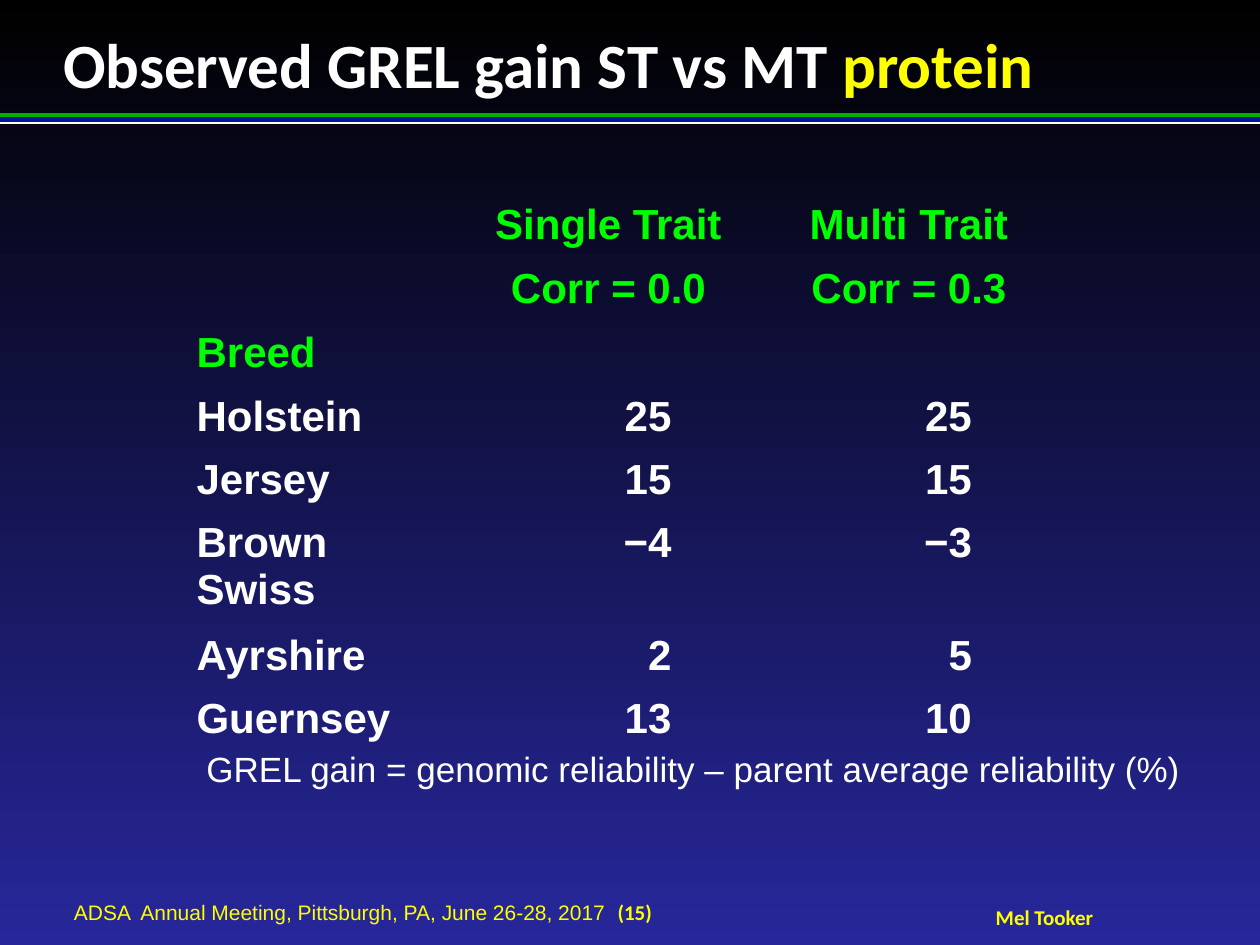
from lxml import etree
from pptx import Presentation
from pptx.dml.color import RGBColor
from pptx.enum.shapes import MSO_SHAPE
from pptx.enum.text import MSO_ANCHOR, MSO_AUTO_SIZE, PP_ALIGN
from pptx.oxml.ns import qn
from pptx.util import Pt

LEFT, CENTER = PP_ALIGN.LEFT, PP_ALIGN.CENTER
TOP, MIDDLE = MSO_ANCHOR.TOP, MSO_ANCHOR.MIDDLE
FIT_SHAPE = MSO_AUTO_SIZE.SHAPE_TO_FIT_TEXT
RECTANGLE = MSO_SHAPE.RECTANGLE
PX = 914400 // 126
WHITE, YELLOW, GREEN = "FFFFFF", "FFFF00", "00FF00"
NO_GRID_STYLE = "{2D5ABB26-0587-4C30-8999-92F81FD0307C}"


def color(hex_string):
    return RGBColor.from_string(hex_string)


def add_run(paragraph, text, size, font_name, font_color, bold=False):
    run = paragraph.add_run()
    run.text = text
    run.font.size = Pt(size)
    run.font.name = font_name
    run.font.bold = bold
    run.font.color.rgb = color(font_color)


presentation = Presentation()
presentation.slide_width = 1260 * PX
presentation.slide_height = 945 * PX
slide = presentation.slides.add_slide(presentation.slide_layouts[5])

background = slide.background.fill
background.gradient()
background.gradient_angle = 270
for stop, stop_color, position in zip(background.gradient_stops, ("000000", "27279B"), (0, 1)):
    stop.color.rgb = color(stop_color)
    stop.position = position

for top, height, stripe_color in ((113, 4, "01AF00"), (121, 3, WHITE), (117, 5, "001799")):
    stripe = slide.shapes.add_shape(RECTANGLE, 0, top * PX, 1260 * PX, height * PX)
    stripe.shadow.inherit = False
    stripe.fill.solid()
    stripe.fill.fore_color.rgb = color(stripe_color)
    stripe.line.fill.background()

title = slide.shapes.title
title.left, title.top, title.width, title.height = 63 * PX, 25 * PX, 1134 * PX, 77 * PX
title_frame = title.text_frame
title_frame.margin_left = title_frame.margin_right = 0
title_frame.margin_top = title_frame.margin_bottom = 0
title_frame.vertical_anchor = TOP
title_frame.word_wrap = True
title_frame.auto_size = FIT_SHAPE
paragraph = title_frame.paragraphs[0]
paragraph.alignment = LEFT
add_run(paragraph, "Observed GREL gain ST vs MT ", 36, "Calibri", WHITE, True)
add_run(paragraph, "protein", 36, "Calibri", YELLOW, True)

rows = [
    ("", "Single Trait", "Multi Trait"),
    ("", "\tCorr = 0.0", "\tCorr = 0.3"),
    ("Breed", "", ""),
    ("Holstein", "\t25", "\t25"),
    ("Jersey", "\t15", "\t15"),
    ("Brown Swiss", "\t−4", "\t−3"),
    ("Ayrshire", "\t2", "\t5"),
    ("Guernsey", "\t13", "\t10"),
]
header_rows = 3
row_heights = [64, 64, 64, 59, 59, 106, 59, 59]
table = slide.shapes.add_table(
    len(rows), 3, 184 * PX, 195 * PX, 884 * PX, sum(row_heights) * PX
).table
table.first_row = False
table.horz_banding = False
table._tbl.tblPr.find(qn("a:tableStyleId")).text = NO_GRID_STYLE
for column, width in zip(table.columns, (283, 283, 318)):
    column.width = width * PX

for row_index, row in enumerate(rows):
    table.rows[row_index].height = row_heights[row_index] * PX
    for column_index, text in enumerate(row):
        cell = table.cell(row_index, column_index)
        cell.fill.background()
        if not text:
            continue
        paragraph = cell.text_frame.paragraphs[0]
        paragraph.alignment = CENTER if column_index else LEFT
        if text.startswith("\t"):
            tab_list = etree.SubElement(paragraph._p.get_or_add_pPr(), qn("a:tabLst"))
            etree.SubElement(tab_list, qn("a:tab"), pos="914400", algn="dec")
        add_run(paragraph, text, 24, "Arial", GREEN if row_index < header_rows else WHITE, True)

text_boxes = [
    (194, 741, 1007, 55, LEFT, False, None, TOP,
     [("GREL gain = genomic reliability – parent average reliability (%)", 20, "Arial", WHITE)]),
    (74, 900, 857, 25, LEFT, True, 0, MIDDLE,
     [("ADSA  Annual Meeting, Pittsburgh, PA, June 26-28, 2017  ", 12, "Arial", YELLOW),
      ("(15)", 12, "Calibri", YELLOW, True)]),
    (989, 905, 111, 25, CENTER, False, 0, MIDDLE,
     [("Mel Tooker", 12, "Calibri", YELLOW, True)]),
]
for left, top, width, height, alignment, wrap, margin, anchor, runs in text_boxes:
    text_box = slide.shapes.add_textbox(left * PX, top * PX, width * PX, height * PX)
    text_frame = text_box.text_frame
    text_frame.word_wrap = wrap
    text_frame.auto_size = FIT_SHAPE
    text_frame.vertical_anchor = anchor
    if margin is not None:
        text_frame.margin_left = text_frame.margin_right = margin
        text_frame.margin_top = text_frame.margin_bottom = margin
    paragraph = text_frame.paragraphs[0]
    paragraph.alignment = alignment
    for run in runs:
        add_run(paragraph, *run)

presentation.save("out.pptx")
